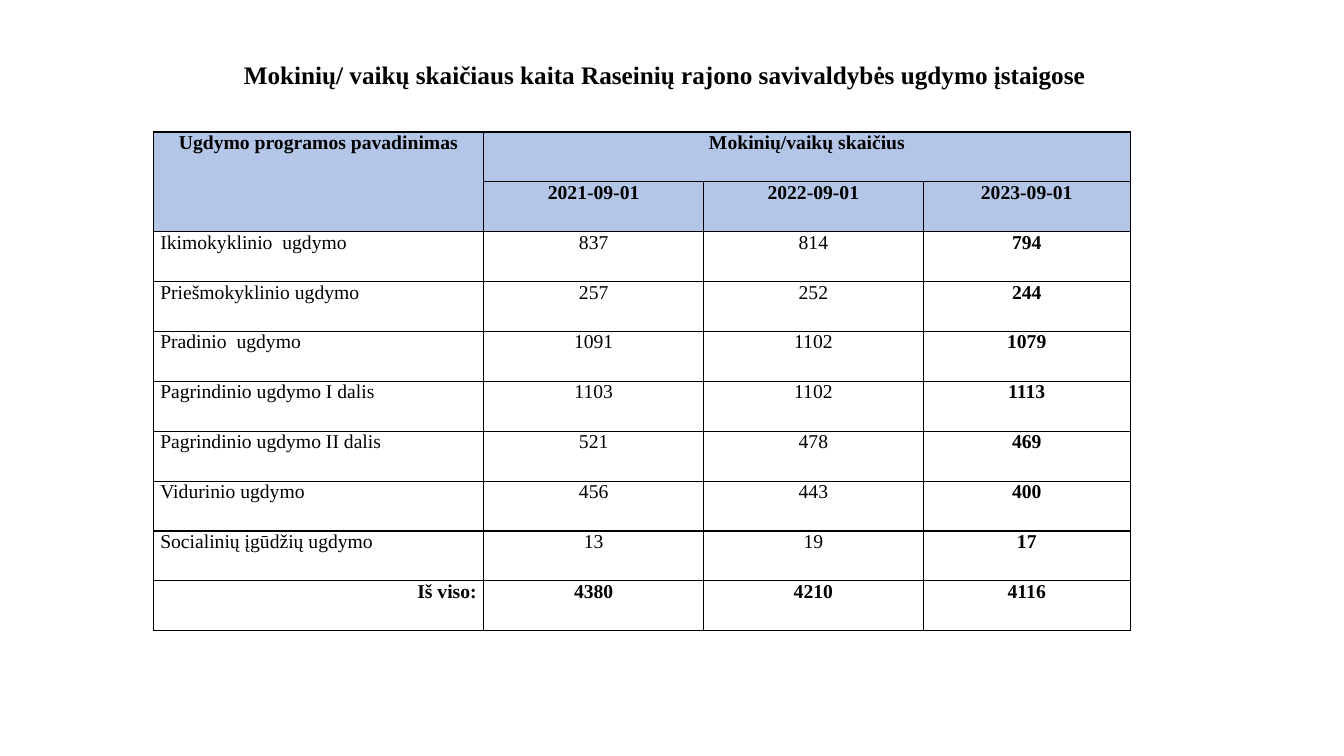
from dataclasses import dataclass

from lxml import etree
from pptx import Presentation
from pptx import util as u
from pptx.dml.color import RGBColor
from pptx.enum import text
from pptx.oxml.ns import qn


@dataclass(frozen=True)
class Theme:
    font: str = "Times New Roman"
    ink: str = "000000"
    header: str = "B4C6E7"
    paper: str = "FFFFFF"
    title_size: int = 18
    cell_size: int = 14
    cell_gap: int = 8
    cell_margin: float = 0.07
    border: int = 1


LEFT, CENTER, RIGHT = text.PP_ALIGN.LEFT, text.PP_ALIGN.CENTER, text.PP_ALIGN.RIGHT
HEADER_ROWS = 2
COLUMN_WIDTHS = [24.6, 16.35, 16.35, 15.4]
ROW_HEIGHT = 6.6
ROWS = [
    ["Ugdymo programos pavadinimas", "Mokinių/vaikų skaičius", "", ""],
    ["", "2021-09-01", "2022-09-01", "2023-09-01"],
    ["Ikimokyklinio  ugdymo", "837", "814", "794"],
    ["Priešmokyklinio ugdymo", "257", "252", "244"],
    ["Pradinio  ugdymo", "1091", "1102", "1079"],
    ["Pagrindinio ugdymo I dalis", "1103", "1102", "1113"],
    ["Pagrindinio ugdymo II dalis", "521", "478", "469"],
    ["Vidurinio ugdymo", "456", "443", "400"],
    ["Socialinių įgūdžių ugdymo", "13", "19", "17"],
    ["Iš viso:", "4380", "4210", "4116"],
]


class SlideBuilder:
    """Places elements by percentages of the slide's width and height."""

    def __init__(self, prs, theme):
        self.prs, self.theme = prs, theme
        self.s = prs.slides.add_slide(prs.slide_layouts[6])

    def x(self, share):
        return round(self.prs.slide_width * share / 100)

    def y(self, share):
        return round(self.prs.slide_height * share / 100)

    def box(self, left, top, width, height):
        return self.x(left), self.y(top), self.x(width), self.y(height)

    def run(self, p, words, size, bold):
        r = p.add_run()
        r.text = words
        r.font.name, r.font.size, r.font.bold = self.theme.font, u.Pt(size), bold
        r.font.color.rgb = RGBColor.from_string(self.theme.ink)

    def title(self, words, left, top, width, height):
        tf = self.s.shapes.add_textbox(*self.box(left, top, width, height)).text_frame
        tf.word_wrap = True
        tf.auto_size = text.MSO_AUTO_SIZE.SHAPE_TO_FIT_TEXT
        self.run(tf.paragraphs[0], words, self.theme.title_size, True)

    def borders(self, cell):
        tc_pr = cell._tc.get_or_add_tcPr()
        for i, side in enumerate(("lnL", "lnR", "lnT", "lnB")):
            ln = etree.Element(qn(f"a:{side}"), w=str(u.Pt(self.theme.border)))
            fill = etree.SubElement(ln, qn("a:solidFill"))
            etree.SubElement(fill, qn("a:srgbClr"), val=self.theme.ink)
            tc_pr.insert(i, ln)

    def cell(self, cell, words, fill, align, bold):
        cell.margin_left = cell.margin_right = u.Inches(self.theme.cell_margin)
        cell.margin_top = cell.margin_bottom = 0
        cell.fill.solid()
        cell.fill.fore_color.rgb = RGBColor.from_string(fill)
        self.borders(cell)
        p = cell.text_frame.paragraphs[0]
        p.alignment, p.space_after = align, u.Pt(self.theme.cell_gap)
        if words:
            self.run(p, words, self.theme.cell_size, bold)

    def table(self, rows, left, top, widths, row_height):
        """Draws a table with a two-row header and a total in the last row."""
        place = self.box(left, top, sum(widths), row_height * len(rows))
        table = self.s.shapes.add_table(len(rows), len(widths), *place).table
        table.first_row = table.horz_banding = False
        for column, width in zip(table.columns, widths):
            column.width = self.x(width)
        last_row, last_column = len(rows) - 1, len(widths) - 1
        for i, row in enumerate(rows):
            table.rows[i].height = self.y(row_height)
            header, total = i < HEADER_ROWS, i == last_row
            label_align = CENTER if header else RIGHT if total else LEFT
            for j, words in enumerate(row):
                self.cell(
                    table.cell(i, j),
                    words,
                    self.theme.header if header else self.theme.paper,
                    CENTER if j else label_align,
                    header or total or j == last_column,
                )
        table.cell(0, 0).merge(table.cell(HEADER_ROWS - 1, 0))
        table.cell(0, 1).merge(table.cell(0, last_column))


def main():
    prs = Presentation()
    prs.slide_width, prs.slide_height = u.Inches(13.33), u.Inches(7.5)
    slide = SlideBuilder(prs, Theme())
    slide.table(ROWS, 11.4, 17.45, COLUMN_WIDTHS, ROW_HEIGHT)
    slide.title(
        "Mokinių/ vaikų skaičiaus kaita Raseinių rajono savivaldybės ugdymo įstaigose",
        17.4, 7.2, 72.7, 5.35,
    )
    prs.save("out.pptx")


if __name__ == "__main__":
    main()
